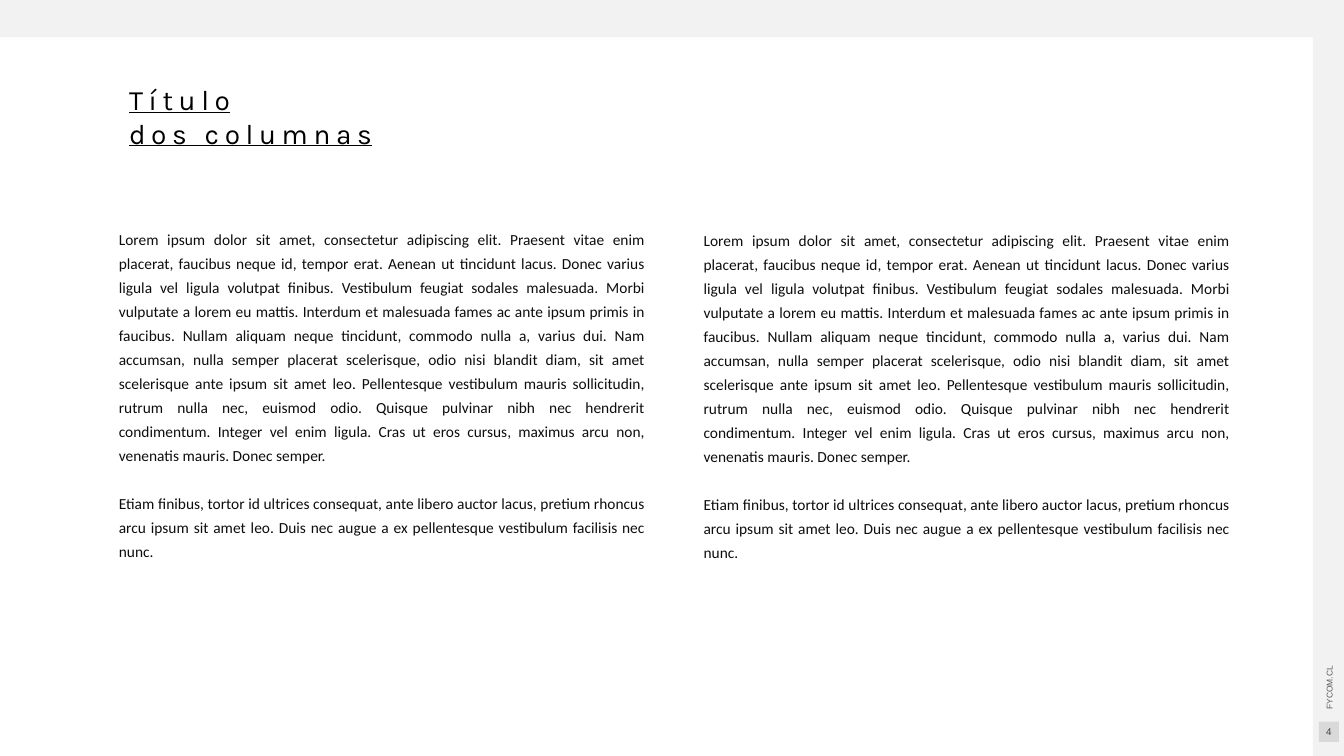
from pptx import Presentation
from pptx.dml.color import RGBColor
from pptx.enum.shapes import MSO_SHAPE
from pptx.enum.text import MSO_ANCHOR, PP_ALIGN
from pptx.util import Inches, Pt

SLIDE_W, SLIDE_H = 13.33, 7.5
BAND_W, BAND_H = 0.31, 0.37
COLUMN_LEFT, COLUMN_W, COLUMN_H = 1.08, 5.42, 4.26
COLUMN_PITCH = 5.8
COLUMN_TOPS = (2.18, 2.19)

BAND_GRAY = RGBColor(0xF2, 0xF2, 0xF2)
BADGE_GRAY = RGBColor(0xD9, 0xD9, 0xD9)
NUMBER_GRAY = RGBColor(0x40, 0x40, 0x40)
FOOTER_GRAY = RGBColor(0x59, 0x59, 0x59)
BODY_INK = RGBColor(0x0D, 0x0D, 0x0D)
BLACK = RGBColor(0, 0, 0)

TITLE = ("Título", "dos columnas")
BODY = (
    "Lorem ipsum dolor sit amet, consectetur adipiscing elit. Praesent vitae "
    "enim placerat, faucibus neque id, tempor erat. Aenean ut tincidunt lacus. "
    "Donec varius ligula vel ligula volutpat finibus. Vestibulum feugiat "
    "sodales malesuada. Morbi vulputate a lorem eu mattis. Interdum et "
    "malesuada fames ac ante ipsum primis in faucibus. Nullam aliquam neque "
    "tincidunt, commodo nulla a, varius dui. Nam accumsan, nulla semper "
    "placerat scelerisque, odio nisi blandit diam, sit amet scelerisque ante "
    "ipsum sit amet leo. Pellentesque vestibulum mauris sollicitudin, rutrum "
    "nulla nec, euismod odio. Quisque pulvinar nibh nec hendrerit condimentum. "
    "Integer vel enim ligula. Cras ut eros cursus, maximus arcu non, venenatis "
    "mauris. Donec semper.",
    "Etiam finibus, tortor id ultrices consequat, ante libero auctor lacus, "
    "pretium rhoncus arcu ipsum sit amet leo. Duis nec augue a ex pellentesque "
    "vestibulum facilisis nec nunc.",
)


def add_block(slide, left, top, width, height, color):
    """Add a plain filled rectangle without line or shadow."""
    sp = slide.shapes.add_shape(
        MSO_SHAPE.RECTANGLE, *map(Inches, (left, top, width, height)))
    sp.shadow.inherit = False
    sp.fill.solid()
    sp.fill.fore_color.rgb = color
    sp.line.fill.background()
    return sp


def add_text(slide, left, top, width, height, lines, **style):
    sp = slide.shapes.add_textbox(*map(Inches, (left, top, width, height)))
    sp.text_frame.word_wrap = True
    write(sp.text_frame, lines, **style)
    return sp


def write(tf, lines, font, size, color, align=PP_ALIGN.LEFT):
    tf.text = "\n".join(lines)
    for p in tf.paragraphs:
        p.alignment = align
        for r in p.runs:
            r.font.name = font
            r.font.size = Pt(size)
            r.font.color.rgb = color


def add_frame(slide):
    """Add the gray bands, the page number and the web address."""
    add_block(slide, SLIDE_W - BAND_W, 0, BAND_W, SLIDE_H, BAND_GRAY)
    add_block(slide, 0, 0, SLIDE_W, BAND_H, BAND_GRAY)

    badge = add_block(slide, 13.08, 7.16, 0.2, 0.2, BADGE_GRAY)
    tf = badge.text_frame
    tf.word_wrap = False
    tf.vertical_anchor = MSO_ANCHOR.MIDDLE
    tf.margin_left = tf.margin_right = Inches(0.12)
    tf.margin_top = tf.margin_bottom = Inches(0.12)
    write(tf, ["4"], "Arial", 7, NUMBER_GRAY, PP_ALIGN.CENTER)

    address = add_text(slide, 9.84, 3.69, 6.69, 0.2, ["FYCOM.CL"],
                       font="Arial", size=6, color=FOOTER_GRAY)
    address.rotation = 270


def add_column(slide, index, top):
    left = COLUMN_LEFT + index * COLUMN_PITCH
    sp = add_text(slide, left, top, COLUMN_W, COLUMN_H, BODY, font="Calibri",
                  size=11, color=BODY_INK, align=PP_ALIGN.JUSTIFY)
    paragraphs = sp.text_frame.paragraphs
    for p in paragraphs:
        p.line_spacing = 1.3
    paragraphs[-1].space_before = Pt(17.2)


def add_title(slide):
    sp = add_text(slide, 1.28, 0.77, 2.69, 0.77, TITLE,
                  font="Karla", size=20, color=BLACK)
    sp.text_frame.margin_left = 0
    for p in sp.text_frame.paragraphs:
        for r in p.runs:
            r.font.underline = True
            r._r.get_or_add_rPr().set("spc", "400")


def main():
    prs = Presentation()
    prs.slide_width, prs.slide_height = Inches(SLIDE_W), Inches(SLIDE_H)
    slide = prs.slides.add_slide(prs.slide_layouts[6])
    add_frame(slide)
    for index, top in enumerate(COLUMN_TOPS):
        add_column(slide, index, top)
    add_title(slide)
    prs.save("out.pptx")


if __name__ == "__main__":
    main()
